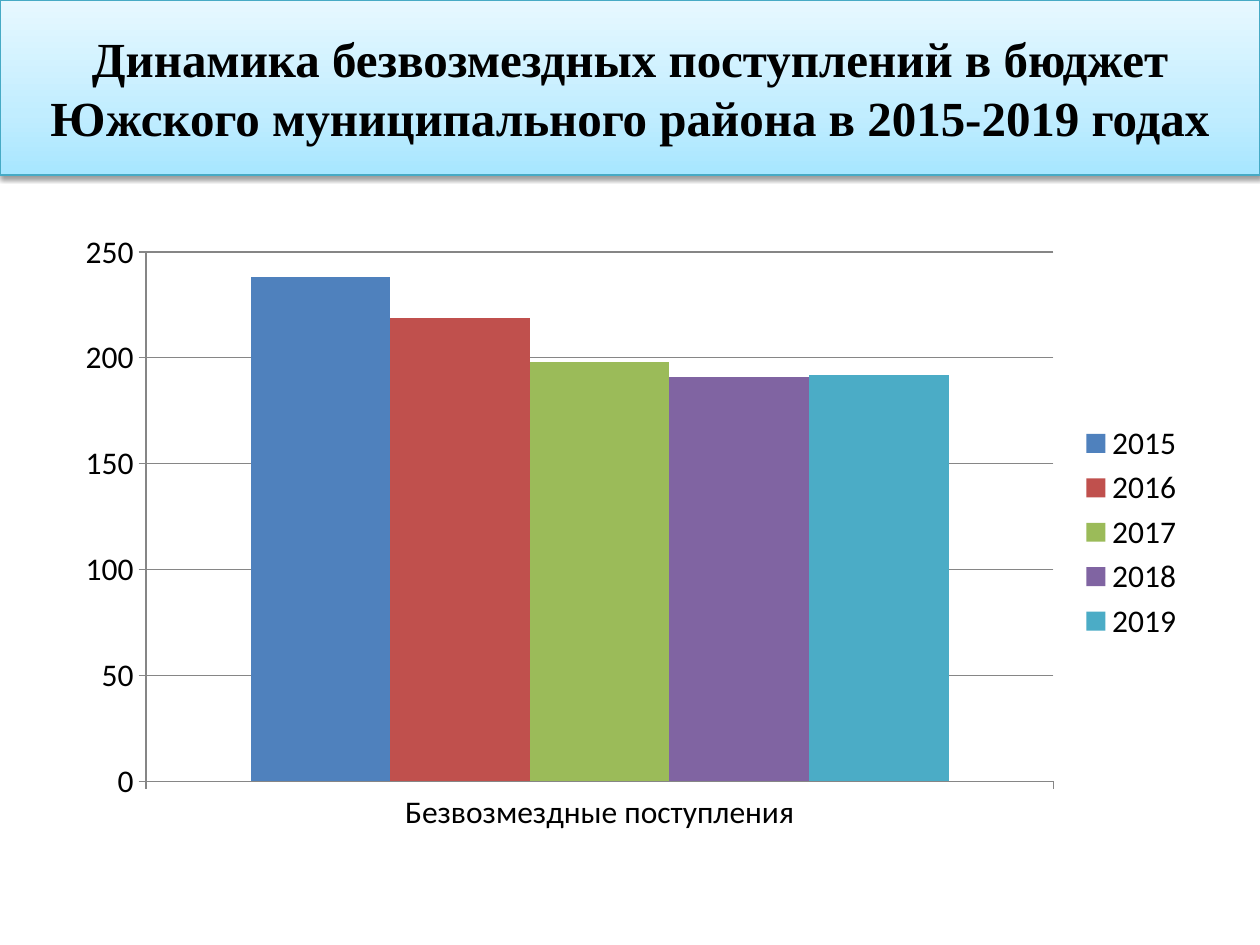
"""Build a slide with a title banner and a clustered column chart of budget receipts."""
from pptx import Presentation
from pptx.chart.data import CategoryChartData
from pptx.dml.color import RGBColor
from pptx.enum.chart import XL_CHART_TYPE, XL_LEGEND_POSITION, XL_TICK_MARK
from pptx.enum.shapes import MSO_SHAPE
from pptx.enum.text import MSO_ANCHOR, PP_ALIGN
from pptx.oxml import parse_xml
from pptx.oxml.ns import nsdecls, qn
from pptx.util import Pt


def rgb(value):
    return RGBColor.from_string(value)


def set_font(font, fmt, color):
    for name, value in fmt.items():
        setattr(font, name, value)
    font.color.rgb = rgb(color)


TITLE = "Динамика безвозмездных поступлений в бюджет Южского муниципального района в 2015-2019 годах"
TITLE_FONT = {"name": "Times New Roman", "size": Pt(28), "bold": True}
CHART_FONT = {"name": "Calibri", "size": Pt(18)}
STOPS = [(0, "A7E6FF"), (35, "C1EDFF"), (100, "E7F8FF")]
SERIES = [
    ("2015", 238, "4F81BD"),
    ("2016", 219, "C0504D"),
    ("2017", 198, "9BBB59"),
    ("2018", 191, "8064A2"),
    ("2019", 192, "4BACC6"),
]

prs = Presentation()
prs.slide_width, prs.slide_height = Pt(720), Pt(540)
s = prs.slides.add_slide(prs.slide_layouts[6])

sp = s.shapes.add_shape(MSO_SHAPE.RECTANGLE, Pt(0), Pt(0), Pt(720), Pt(100))
sp.line.color.rgb = rgb("46AAC5")
sp.line.width = Pt(0.75)
sp.shadow.inherit = False
spPr = sp._element.spPr
stops = "".join(f'<a:gs pos="{pos * 1000}"><a:srgbClr val="{color}"/></a:gs>' for pos, color in STOPS)
spPr.find(qn("a:prstGeom")).addnext(parse_xml(
    f'<a:gradFill {nsdecls("a")} rotWithShape="1"><a:gsLst>{stops}</a:gsLst>'
    '<a:lin ang="16200000" scaled="1"/></a:gradFill>'))
spPr.find(qn("a:effectLst")).append(parse_xml(
    f'<a:outerShdw {nsdecls("a")} blurRad="{Pt(3.1)}" dist="{Pt(1.6)}" dir="5400000" rotWithShape="0">'
    '<a:srgbClr val="000000"><a:alpha val="38000"/></a:srgbClr></a:outerShdw>'))

tf = sp.text_frame
tf.word_wrap = True
tf.vertical_anchor = MSO_ANCHOR.MIDDLE
p = tf.paragraphs[0]
p.alignment = PP_ALIGN.CENTER
r = p.add_run()
r.text = TITLE
set_font(r.font, TITLE_FONT, "000000")

data = CategoryChartData()
data.categories = ["Безвозмездные поступления"]
for name, value, color in SERIES:
    data.add_series(name, [value])
chart = s.shapes.add_chart(
    XL_CHART_TYPE.COLUMN_CLUSTERED, Pt(36), Pt(126), Pt(648), Pt(356.4), data).chart
set_font(chart.font, CHART_FONT, "000000")
chart.has_title = False
chart.has_legend = True
chart.legend.position = XL_LEGEND_POSITION.RIGHT
chart.legend.include_in_layout = False

plot = chart.plots[0]
plot.gap_width = 150
plot.overlap = 0
plot.vary_by_categories = False
for ser, (name, value, color) in zip(plot.series, SERIES):
    ser.format.fill.solid()
    ser.format.fill.fore_color.rgb = rgb(color)

val_axis = chart.value_axis
val_axis.minimum_scale, val_axis.maximum_scale, val_axis.major_unit = 0, 250, 50
val_axis.has_major_gridlines = True
for axis in (chart.category_axis, val_axis):
    axis.major_tick_mark = XL_TICK_MARK.OUTSIDE
for part in (chart.category_axis, val_axis, val_axis.major_gridlines):
    part.format.line.color.rgb = rgb("868686")
    part.format.line.width = Pt(0.75)

prs.save("out.pptx")
